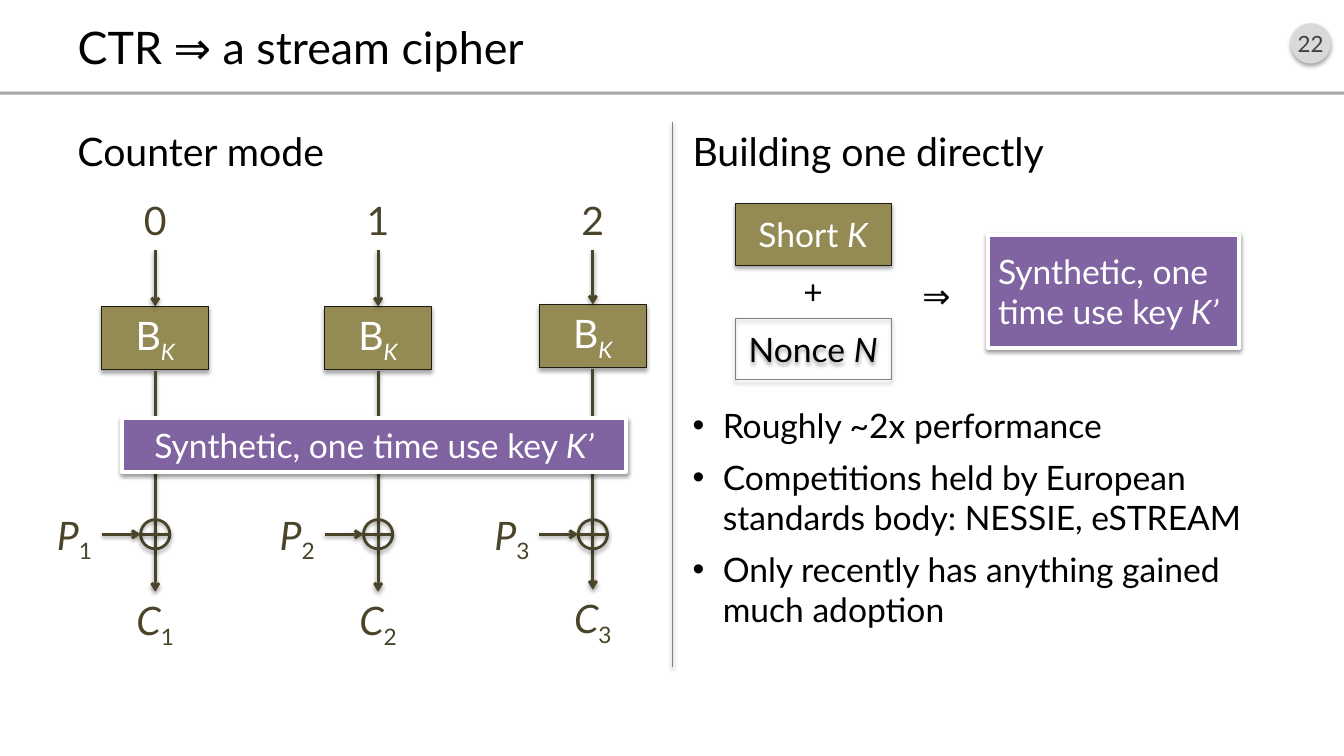
from dataclasses import dataclass

from lxml import etree
from pptx import Presentation
from pptx.dml.color import RGBColor
from pptx.enum.shapes import MSO_CONNECTOR, MSO_SHAPE
from pptx.enum.text import MSO_ANCHOR, MSO_AUTO_SIZE, PP_ALIGN
from pptx.oxml.ns import qn
from pptx.util import Inches, Pt

STRAIGHT = MSO_CONNECTOR.STRAIGHT
RECT, OVAL = MSO_SHAPE.RECTANGLE, MSO_SHAPE.OVAL
TOP, MIDDLE = MSO_ANCHOR.TOP, MSO_ANCHOR.MIDDLE
LEFT, CENTER, RIGHT = PP_ALIGN.LEFT, PP_ALIGN.CENTER, PP_ALIGN.RIGHT
NO_FIT = MSO_AUTO_SIZE.NONE
TITLE_ONLY = 5


@dataclass(frozen=True)
class Theme:
    """Colours, font and type sizes of the slide."""
    font: str = "Lato"
    title: int = 32
    heading: int = 28
    body: int = 24
    number: int = 16
    black: str = "000000"
    white: str = "FFFFFF"
    ink: str = "4A452A"
    olive: str = "948A54"
    olive_edge: str = "1E1C11"
    purple: str = "8064A2"
    gray: str = "808080"
    rule: str = "A6A6A6"
    badge: str = "D9D9D9"
    badge_text: str = "404040"


THEME = Theme()
SYNTHETIC_KEY = [("Synthetic, one time use key ", ""), ("K’", "i")]


def add_shadow(part, alpha, distance):
    """Give a shape or connector a soft shadow that falls straight down."""
    properties = part._element.spPr
    for old in properties.findall(qn("a:effectLst")):
        properties.remove(old)
    effects = etree.SubElement(properties, qn("a:effectLst"))
    shadow = etree.SubElement(effects, qn("a:outerShdw"), blurRad=str(Pt(3.1)),
                              dist=str(Pt(distance)), dir="5400000", rotWithShape="0")
    color = etree.SubElement(shadow, qn("a:srgbClr"), val=THEME.black)
    etree.SubElement(color, qn("a:alpha"), val=str(alpha * 1000))


def add_runs(paragraph, runs, size, color):
    """Add (text, style) runs; style holds i for italic and s for subscript."""
    for text, style in runs:
        run = paragraph.add_run()
        run.text = text
        run.font.name = THEME.font
        run.font.size = Pt(size)
        run.font.color.rgb = RGBColor.from_string(color)
        run.font.italic = "i" in style
        if "s" in style:
            run.font._element.set("baseline", "-25000")


def write(part, runs, size, color, align=LEFT, anchor=TOP, wrap=True):
    """Write one paragraph into a part and return its text frame."""
    frame = part.text_frame
    frame.word_wrap = wrap
    frame.auto_size = NO_FIT
    frame.vertical_anchor = anchor
    frame.paragraphs[0].alignment = align
    add_runs(frame.paragraphs[0], runs, size, color)
    return frame


def add_label(slide, box, runs, size, color, align=LEFT, wrap=True):
    """Add a text box with a single paragraph."""
    label = slide.shapes.add_textbox(*map(Inches, box))
    return write(label, runs, size, color, align, wrap=wrap)


def add_block(slide, kind, box, fill=None, edge=None, weight=0.75, shadow=(35, 1.8)):
    """Add a preset shape with its fill, outline and shadow."""
    block = slide.shapes.add_shape(kind, *map(Inches, box))
    if fill:
        block.fill.solid()
        block.fill.fore_color.rgb = RGBColor.from_string(fill)
    else:
        block.fill.background()
    if edge:
        block.line.color.rgb = RGBColor.from_string(edge)
        block.line.width = Pt(weight)
    else:
        block.line.fill.background()
    block.shadow.inherit = False
    if shadow:
        add_shadow(block, *shadow)
    return block


def add_line(slide, start, end, color=THEME.ink, weight=2, arrow=False):
    """Add a straight line, with an arrowhead at its end if wanted."""
    line = slide.shapes.add_connector(STRAIGHT, *map(Inches, start + end))
    line.line.color.rgb = RGBColor.from_string(color)
    line.line.width = Pt(weight)
    if arrow:
        etree.SubElement(line.line._get_or_add_ln(), qn("a:tailEnd"), type="arrow")
    add_shadow(line, 38, 1.6)


def add_synthetic_key(slide, box, align):
    """Add the purple panel that names the synthetic key."""
    panel = add_block(slide, RECT, box, THEME.purple, THEME.white, 3, (38, 1.6))
    write(panel, SYNTHETIC_KEY, THEME.body, THEME.white, align, MIDDLE)


def add_header(slide, box):
    """Add the title, the rule below it and the slide number."""
    left, top, width, height = box
    title = slide.shapes.title
    title.left, title.top = Inches(left + 0.67), Inches(top + 0.16)
    title.width, title.height = Inches(width - 1.33), Inches(0.6)
    write(title, [("CTR ⇒ a stream cipher", "")], THEME.title, THEME.black, LEFT, MIDDLE)
    add_block(slide, RECT, (left, top + height - 0.03, width, 0.03), THEME.rule, shadow=None)
    badge = add_block(slide, OVAL, (left + width - 0.53, top + 0.23, 0.4, 0.4), THEME.badge)
    frame = write(badge, [("22", "")], THEME.number, THEME.badge_text, CENTER, MIDDLE)
    frame.margin_left = frame.margin_right = 0


def add_heading(slide, left, top, text):
    """Add the heading of one half of the slide."""
    frame = add_label(slide, (left, top, 5.89, 0.7), [(text, "")], THEME.heading, THEME.black)
    frame.paragraphs[0].space_before = Pt(8)


def add_cipher_lane(slide, center, top, counter, lift):
    """Add one counter, its block cipher and the XOR that makes its ciphertext."""
    index = str(counter + 1)
    size, ink = THEME.heading, THEME.ink
    cipher_top = top + 1.14 - lift
    cipher_end = cipher_top + 0.64
    output_top = top + 3.97 - lift
    xor, radius = top + 3.4, 0.145
    cipher = add_block(slide, RECT, (center - 0.53, cipher_top, 1.06, 0.63),
                       THEME.olive, THEME.olive_edge)
    write(cipher, [("B", ""), ("K", "is")], size, THEME.white, CENTER, MIDDLE)
    add_line(slide, (center, top + 0.58), (center, cipher_top), arrow=True)
    add_line(slide, (center, cipher_end), (center, output_top), arrow=True)
    add_label(slide, (center - 0.6, top, 1.2, 0.57), [(str(counter), "")], size, ink, CENTER)
    add_label(slide, (center - 0.6, output_top, 1.2, 0.57),
              [("C", "i"), (index, "s")], size, ink, CENTER)
    add_block(slide, OVAL, (center - radius, xor - radius, 2 * radius, 2 * radius),
              edge=ink, weight=2)
    add_line(slide, (center - radius, xor), (center + radius, xor))
    add_label(slide, (center - 1.3, xor - 0.28, 0.77, 0.57),
              [("P", "i"), (index, "s")], size, ink, RIGHT)
    add_line(slide, (center - 0.53, xor), (center - radius, xor), arrow=True)


def add_counter_mode(slide, box):
    """Add the left half: three cipher lanes crossed by the synthetic key."""
    left, top = box
    add_heading(slide, left, top, "Counter mode")
    lanes = [(0.87, 0), (3.08, 0), (5.21, 0.02)]
    for counter, (offset, lift) in enumerate(lanes):
        add_cipher_lane(slide, left + offset, top + 0.69, counter, lift)
    add_synthetic_key(slide, (left + 0.54, top + 2.94, 5, 0.53), CENTER)


def add_direct_build(slide, box):
    """Add the right half: key and nonce become the synthetic key, then remarks."""
    left, top = box
    size, black = THEME.body, THEME.black
    add_heading(slide, left, top, "Building one directly")
    add_synthetic_key(slide, (left + 3.03, top + 1.12, 2.49, 1.12), LEFT)
    inputs = [("Short ", "K", 0.81, THEME.olive, THEME.olive_edge, THEME.white),
              ("Nonce ", "N", 1.95, None, THEME.gray, black)]
    for word, symbol, offset, fill, edge, color in inputs:
        block = add_block(slide, RECT, (left + 0.52, top + offset, 1.55, 0.61), fill, edge)
        write(block, [(word, ""), (symbol, "i")], size, color, CENTER, MIDDLE)
    for sign, x, y, width in [("+", 1.1, 1.43, 0.4), ("⇒", 2.28, 1.47, 0.54)]:
        add_label(slide, (left + x, top + y, width, 0.5), [(sign, "")], size, black, wrap=False)
    remarks = ["Roughly ~2x performance",
               "Competitions held by European standards body: NESSIE, eSTREAM",
               "Only recently has anything gained much adoption"]
    frame = add_label(slide, (left, top + 2.76, 5.89, 2.98), [(remarks[0], "")], size, black)
    for remark in remarks[1:]:
        add_runs(frame.add_paragraph(), [(remark, "")], size, black)
    for paragraph in frame.paragraphs:
        paragraph.space_before = Pt(8)
        properties = paragraph._p.get_or_add_pPr()
        properties.set("marL", str(Inches(0.3)))
        properties.set("indent", str(-Inches(0.3)))
        etree.SubElement(properties, qn("a:buFont"), typeface="Arial")
        etree.SubElement(properties, qn("a:buChar"), char="•")


def main():
    """Build the slide and save it."""
    deck = Presentation()
    deck.slide_width, deck.slide_height = Inches(13.33), Inches(7.5)
    slide = deck.slides.add_slide(deck.slide_layouts[TITLE_ONLY])
    add_header(slide, (0, 0, 13.33, 0.94))
    add_counter_mode(slide, (0.67, 1.21))
    add_direct_build(slide, (6.77, 1.21))
    add_line(slide, (6.67, 1.21), (6.67, 6.62), THEME.gray, 0.75)
    deck.save("out.pptx")


if __name__ == "__main__":
    main()
